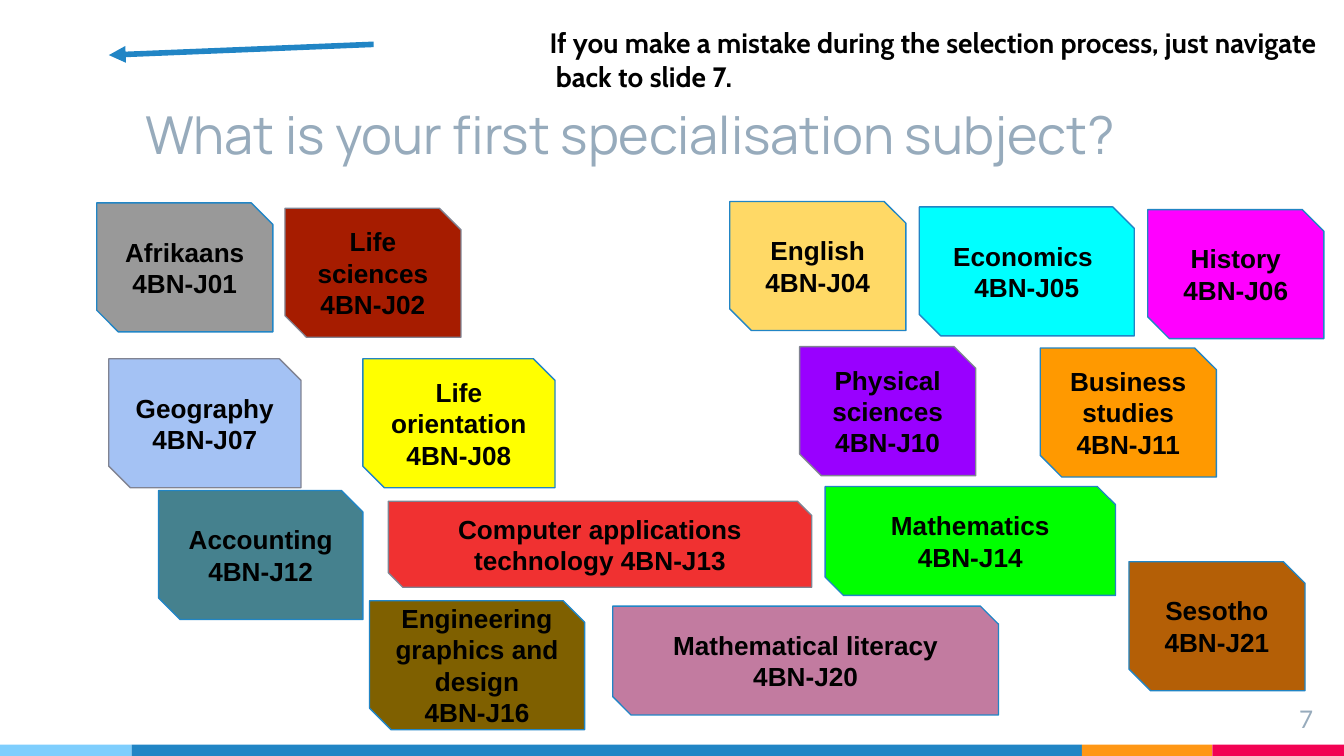
"""Build the slide for choosing a first specialisation subject."""
from pptx import Presentation
from pptx.dml.color import RGBColor
from pptx.enum.shapes import MSO_CONNECTOR, MSO_SHAPE
from pptx.enum.text import MSO_ANCHOR as ANCHOR, MSO_AUTO_SIZE, PP_ALIGN as ALIGN
from pptx.oxml.ns import qn
from pptx.util import Pt
from lxml.etree import SubElement

PX = 9144
WIDTH = 1000
HEIGHT = WIDTH * 9 / 16
BLUE, GREY, PALE, BLACK = "2185C5", "808392", "97ABBC", "000000"

TITLE = "What is your first specialisation subject?"
NOTE = "If you make a mistake during the selection process, just navigate  back to slide 7."
STRIP_TOP = 554
STRIP = [(98, "7ECEFD"), (707, BLUE), (97, "FF9715"), (98, "F20253")]
ARROW = (278, 33, 81, 41)
SUBJECTS = [
    (["Afrikaans", "4BN-J01"], (72, 151, 131, 96), "999999", BLUE),
    (["Life sciences", "4BN-J02"], (212, 155, 131, 96), "A61C00", GREY),
    (["English", "4BN-J04"], (543, 150, 131, 96), "FFD966", BLUE),
    (["Economics ", "4BN-J05"], (684, 154, 160, 96), "00FFFF", BLUE),
    (["History", "4BN-J06"], (854, 156, 131, 96), "FF00FF", BLUE),
    (["Geography", "4BN-J07"], (81, 267, 143, 96), "A4C2F4", GREY),
    (["Life orientation", "4BN-J08"], (270, 267, 143, 96), "FFFF00", BLUE),
    (["Physical sciences", "4BN-J10"], (595, 258, 131, 96), "9900FF", GREY),
    (["Business studies", "4BN-J11"], (774, 259, 131, 96), "FF9900", BLUE),
    (["Accounting", "4BN-J12"], (118, 365, 152, 96), "45818E", BLUE),
    (["Computer applications technology 4BN-J13"], (289, 373, 315, 64), "F03131", GREY),
    (["Mathematics", "4BN-J14"], (614, 362, 216, 81), "00FF00", BLUE),
    (["Engineering graphics and design", "4BN-J16"], (275, 447, 160, 96), "7F6000", BLUE),
    (["Mathematical literacy", "4BN-J20"], (456, 451, 287, 81), "C27BA0", BLUE),
    (["Sesotho", "4BN-J21"], (840, 418, 131, 96), "B45F06", BLUE),
]


def rgb(code):
    return RGBColor.from_string(code)


def emu(lengths):
    return [round(length * PX) for length in lengths]


def write(box, lines, size, font, color=BLACK, bold=False, align=ALIGN.LEFT, anchor=ANCHOR.TOP):
    frame = box.text_frame
    frame.word_wrap = True
    frame.auto_size = MSO_AUTO_SIZE.NONE
    frame.vertical_anchor = anchor
    frame.margin_left = frame.margin_right = frame.margin_top = frame.margin_bottom = 10 * PX
    frame.text = "\n".join(lines)
    for para in frame.paragraphs:
        para.alignment = align
        for span in para.runs:
            span.font.size, span.font.name, span.font.bold = Pt(size), font, bold
            span.font.color.rgb = rgb(color)


def add_block(page, kind, place, fill, line=None):
    block = page.shapes.add_shape(kind, *emu(place))
    block.shadow.inherit = False
    block.fill.solid()
    block.fill.fore_color.rgb = rgb(fill)
    if line:
        block.line.color.rgb = rgb(line)
        block.line.width = Pt(0.75)
    else:
        block.line.fill.background()
    return block


def add_arrow(page):
    arrow = page.shapes.add_connector(MSO_CONNECTOR.STRAIGHT, *emu(ARROW))
    arrow.line.color.rgb = rgb(BLUE)
    arrow.line.width = Pt(3)
    SubElement(arrow.line._get_or_add_ln(), qn("a:tailEnd"), type="triangle")
    SubElement(arrow._element.spPr, qn("a:effectLst"))


def main():
    deck = Presentation()
    deck.slide_width, deck.slide_height = emu((WIDTH, HEIGHT))
    page = deck.slides.add_slide(deck.slide_layouts[5])

    title = page.shapes.title
    title.left, title.top, title.width, title.height = emu((98, 69, 858, 64))
    write(title, [TITLE], 28, "Manrope", PALE, anchor=ANCHOR.BOTTOM)

    left = 0
    for width, fill in STRIP:
        add_block(page, MSO_SHAPE.RECTANGLE, (left, STRIP_TOP, width, HEIGHT - STRIP_TOP), fill)
        left += width

    number = page.shapes.add_textbox(*emu((927, 514, 60, 34)))
    write(number, ["7"], 13, "Lato", PALE, align=ALIGN.RIGHT)

    for lines, place, fill, line in SUBJECTS:
        card = add_block(page, MSO_SHAPE.SNIP_2_DIAG_RECTANGLE, place, fill, line)
        card.adjustments[0], card.adjustments[1] = 0, 0.167
        write(card, lines, 14, "Arial", bold=True, align=ALIGN.CENTER, anchor=ANCHOR.MIDDLE)

    add_arrow(page)
    note = page.shapes.add_textbox(*emu((399, 9, 595, 64)))
    write(note, [NOTE], 15, "Cabin", bold=True)
    deck.save("out.pptx")


if __name__ == "__main__":
    main()
